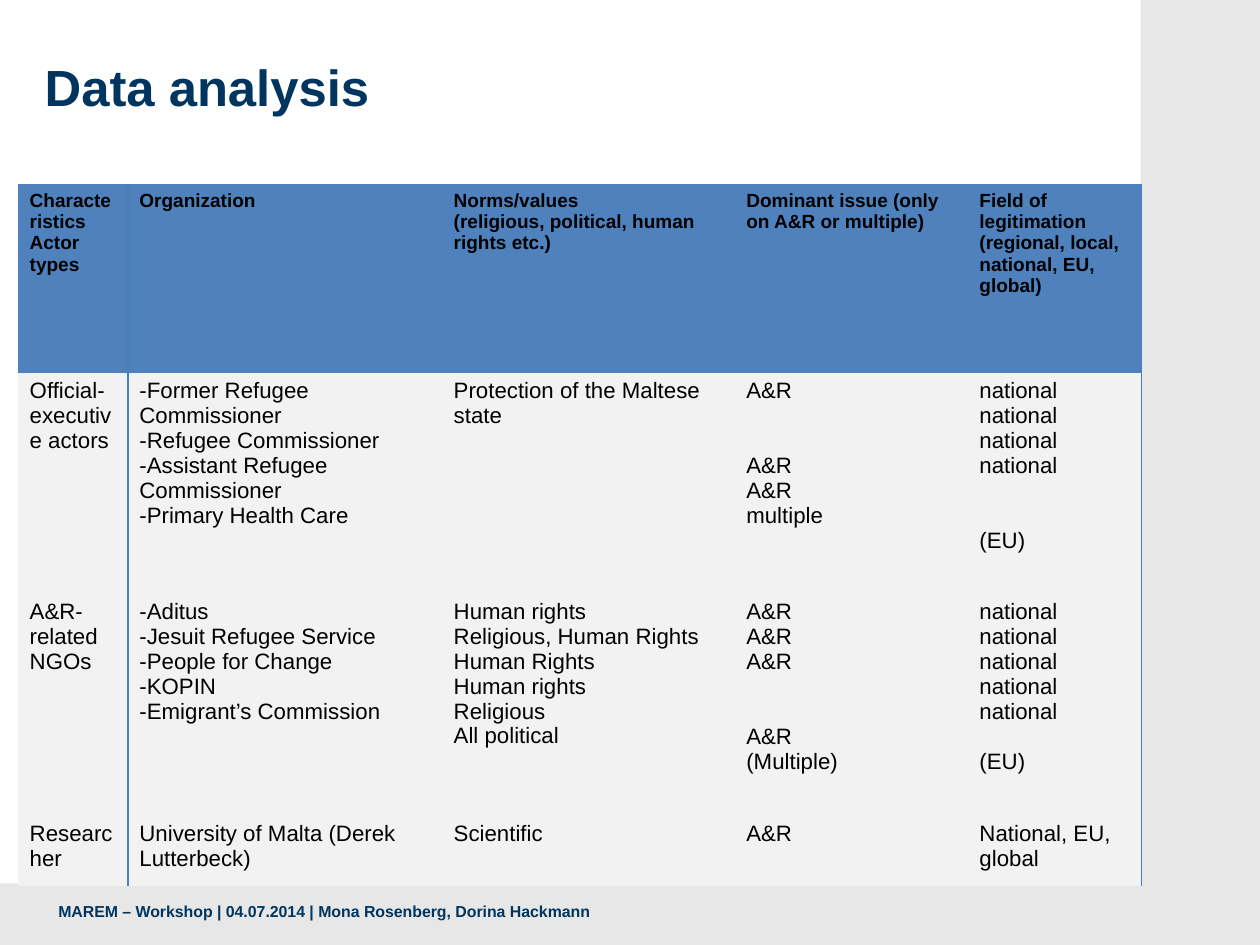
"""Build the data analysis slide with its table of actor types."""
from lxml import etree
from pptx import Presentation
from pptx.dml.color import RGBColor
from pptx.enum.shapes import MSO_SHAPE
from pptx.enum.text import MSO_ANCHOR, PP_ALIGN
from pptx.oxml.ns import qn
from pptx.util import Cm, Inches, Pt

RECT = MSO_SHAPE.RECTANGLE
LEFT = PP_ALIGN.LEFT
TOP, MIDDLE = MSO_ANCHOR.TOP, MSO_ANCHOR.MIDDLE
NAVY = RGBColor(0x00, 0x35, 0x60)
BLACK = RGBColor(0x00, 0x00, 0x00)
WHITE = RGBColor(0xFF, 0xFF, 0xFF)
GREY = RGBColor(0xE7, 0xE7, 0xE7)
PALE = RGBColor(0xF2, 0xF2, 0xF2)
BLUE = RGBColor(0x4F, 0x81, 0xBD)
RULE = RGBColor(0x4A, 0x7E, 0xBB)
PLAIN = "{2D5ABB26-0587-4C30-8999-92F81FD0307C}"
LINE = 15.75

WIDTHS = [0.96, 2.75, 2.56, 2.04, 1.52]
HEIGHTS = [1.65, 1.93, 1.95, 0.61]
SIDES = ["a:lnL", "a:lnR", "a:lnT", "a:lnB"]
RULED = {0: "a:lnR", 1: "a:lnL", 4: "a:lnR"}
GAPS = {(1, 3, 1): 2, (1, 4, 4): 2, (2, 3, 3): 2, (2, 4, 5): 1}
ROWS = [
    ["Characteristics\nActor types",
     "Organization",
     "Norms/values\n(religious, political, human rights etc.)",
     "Dominant issue (only on A&R or multiple)",
     "Field of legitimation (regional, local, national, EU, global)"],
    ["Official-executive actors",
     "-Former Refugee Commissioner\n-Refugee Commissioner\n"
     "-Assistant Refugee Commissioner\n-Primary Health Care",
     "Protection of the Maltese state",
     "A&R\nA&R\nA&R\nmultiple",
     "national\nnational\nnational\nnational\n(EU)"],
    ["A&R-related NGOs",
     "-Aditus\n-Jesuit Refugee Service\n-People for Change\n-KOPIN\n"
     "-Emigrant’s Commission",
     "Human rights\nReligious, Human Rights\nHuman Rights\nHuman rights\n"
     "Religious\nAll political",
     "A&R\nA&R\nA&R\nA&R\n(Multiple)",
     "national\nnational\nnational\nnational\nnational\n(EU)"],
    ["Researcher",
     "University of Malta (Derek Lutterbeck)",
     "Scientific",
     "A&R",
     "National, EU, global"],
]


def write(frame, text, size=14, bold=False, color=BLACK, gaps=None):
    """Fill a text frame, one paragraph for each line of text."""
    frame.word_wrap = True
    for n, line in enumerate(text.split("\n")):
        para = frame.add_paragraph() if n else frame.paragraphs[0]
        para.alignment = LEFT
        para.space_before = Pt(LINE * (gaps or {}).get(n, 0))
        run = para.add_run()
        run.text = line
        run.font.name = "Arial"
        run.font.size = Pt(size)
        run.font.bold = bold
        run.font.color.rgb = color


def edge(cell, ruled):
    """Rule one side of a cell and clear the others."""
    props = cell._tc.get_or_add_tcPr()
    for n, side in enumerate(SIDES):
        line = etree.Element(qn(side), w=str(Pt(1)))
        if side == ruled:
            fill = etree.SubElement(line, qn("a:solidFill"))
            etree.SubElement(fill, qn("a:srgbClr"), val=str(RULE))
        else:
            etree.SubElement(line, qn("a:noFill"))
        props.insert(n, line)


deck = Presentation()
deck.slide_width, deck.slide_height = Cm(28), Cm(21)
slide = deck.slides.add_slide(deck.slide_layouts[5])
slide.background.fill.solid()
slide.background.fill.fore_color.rgb = GREY
shapes = slide.shapes

page = shapes.add_shape(RECT, 0, 0, Inches(9.98), Inches(7.73))
page.shadow.inherit = False
page.fill.solid()
page.fill.fore_color.rgb = WHITE
page.line.fill.background()
shapes._spTree.insert(2, page._element)

title = shapes.title
title.left, title.top = Inches(0.29), Inches(0.44)
title.width, title.height = Inches(6.97), Inches(0.63)
write(title.text_frame, "Data analysis", size=32, bold=True, color=NAVY)
title.text_frame.vertical_anchor = MIDDLE

foot = shapes.add_textbox(Inches(0.51), Inches(7.89), Inches(9.22), Inches(0.17))
frame = foot.text_frame
frame.margin_left = frame.margin_right = frame.margin_top = frame.margin_bottom = 0
write(frame, "MAREM – Workshop | 04.07.2014 | Mona Rosenberg, Dorina Hackmann",
      size=10, bold=True, color=NAVY)

grid = shapes.add_table(len(HEIGHTS), len(WIDTHS), Inches(0.16), Inches(1.61),
                        Inches(sum(WIDTHS)), Inches(sum(HEIGHTS)))
table = grid.table
table._tbl.tblPr.find(qn("a:tableStyleId")).text = PLAIN
table.horz_banding = False
for col, width in zip(table.columns, WIDTHS):
    col.width = Inches(width)
for row, height in zip(table.rows, HEIGHTS):
    row.height = Inches(height)

for r, row in enumerate(ROWS):
    head = r == 0
    for c, text in enumerate(row):
        cell = table.cell(r, c)
        cell.vertical_anchor = TOP
        cell.fill.solid()
        cell.fill.fore_color.rgb = BLUE if head else PALE
        gaps = {n: k for (y, x, n), k in GAPS.items() if (y, x) == (r, c)}
        write(cell.text_frame, text, size=12 if head else 14, bold=head, gaps=gaps)
        edge(cell, RULED.get(c))

deck.save("out.pptx")
